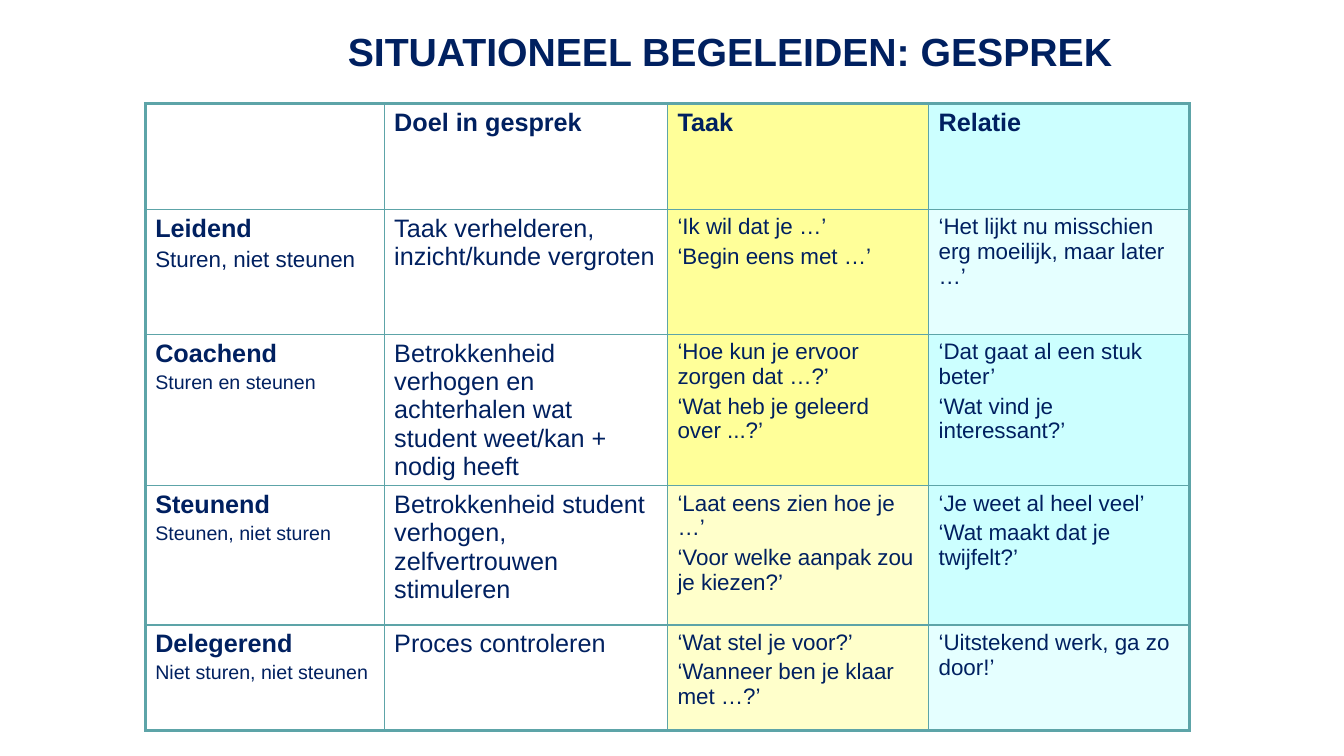
from lxml.etree import SubElement
from pptx import Presentation
from pptx.dml.color import RGBColor
from pptx.enum.text import MSO_ANCHOR, PP_ALIGN
from pptx.oxml.ns import qn
from pptx.util import Inches, Pt

NAVY = RGBColor(0x00, 0x20, 0x60)
TEAL = RGBColor(0x5D, 0xA4, 0xA8)
YELLOW = RGBColor(0xFF, 0xFF, 0x99)
CYAN = RGBColor(0xCC, 0xFF, 0xFF)

COLUMNS = [2.37, 2.81, 2.59, 2.59]
ROWS = [1.05, 1.24, 1.38, 1.38, 1.05]
COLUMN_FILLS = [None, None, YELLOW, CYAN]
PALE_CELLS = {(1, 3), (3, 2), (4, 2), (4, 3)}

# Each cell is a list of paragraphs
CELLS = [
    [[], ["Doel in gesprek"], ["Taak"], ["Relatie"]],
    [["Leidend", "Sturen, niet steunen"],
     ["Taak verhelderen, inzicht/kunde vergroten"],
     ["‘Ik wil dat je …’", "‘Begin eens met …’"],
     ["‘Het lijkt nu misschien erg moeilijk, maar later …’"]],
    [["Coachend", "Sturen en steunen"],
     ["Betrokkenheid verhogen en achterhalen wat student weet/kan + nodig heeft"],
     ["‘Hoe kun je ervoor zorgen dat …?’", "‘Wat heb je geleerd over ...?’"],
     ["‘Dat gaat al een stuk beter’", "‘Wat vind je interessant?’"]],
    [["Steunend", "Steunen, niet sturen"],
     ["Betrokkenheid student verhogen, zelfvertrouwen stimuleren"],
     ["‘Laat eens zien hoe je …’", "‘Voor welke aanpak zou je kiezen?’"],
     ["‘Je weet al heel veel’", "‘Wat maakt dat je twijfelt?’"]],
    [["Delegerend", "Niet sturen, niet steunen"],
     ["Proces controleren"],
     ["‘Wat stel je voor?’", "‘Wanneer ben je klaar met …?’"],
     ["‘Uitstekend werk, ga zo door!’"]],
]


def add_run(p, text, size, bold):
    r = p.add_run()
    r.text = text
    r.font.name = "Arial"
    r.font.size = Pt(size)
    r.font.bold = bold
    r.font.color.rgb = NAVY


def add_border(cell, side, width):
    """Draw one side (L, R, T or B) of a cell; call before filling the cell."""
    ln = SubElement(cell._tc.get_or_add_tcPr(), qn(f"a:ln{side}"), w=str(Pt(width)))
    fill = SubElement(ln, qn("a:solidFill"))
    SubElement(fill, qn("a:srgbClr"), val=str(TEAL))


prs = Presentation()
prs.slide_width, prs.slide_height = Inches(13.33), Inches(7.5)
s = prs.slides.add_slide(prs.slide_layouts[5])

title = s.shapes.title
title.left, title.top = Inches(3.35), Inches(0.27)
title.width, title.height = Inches(8.44), Inches(0.76)
tf = title.text_frame
tf.word_wrap = True
tf.vertical_anchor = MSO_ANCHOR.TOP
p = tf.paragraphs[0]
p.alignment = PP_ALIGN.LEFT
p.line_spacing = 0.9
add_run(p, "SITUATIONEEL BEGELEIDEN: GESPREK", 28, True)

table = s.shapes.add_table(len(ROWS), len(COLUMNS), Inches(1.44), Inches(1.03),
                           Inches(sum(COLUMNS)), Inches(sum(ROWS))).table
table.first_row = False
table.horz_banding = False
for column, width in zip(table.columns, COLUMNS):
    column.width = Inches(width)
for row, height in zip(table.rows, ROWS):
    row.height = Inches(height)

for i, row in enumerate(CELLS):
    for j, texts in enumerate(row):
        cell = table.cell(i, j)
        outer_sides = {"L": j == 0, "R": j == len(COLUMNS) - 1,
                       "T": i == 0, "B": i == len(ROWS) - 1}
        for side, outer in outer_sides.items():
            add_border(cell, side, 2.25 if outer else 1)

        if COLUMN_FILLS[j] is None:
            cell.fill.background()
        else:
            cell.fill.solid()
            cell.fill.fore_color.rgb = COLUMN_FILLS[j]
            if (i, j) in PALE_CELLS:
                color = cell._tc.tcPr.find(qn("a:solidFill")).find(qn("a:srgbClr"))
                SubElement(color, qn("a:alpha"), val="50000")

        tf = cell.text_frame
        for k, text in enumerate(texts):
            if j == 0 and k == 1:
                size = 16 if i == 1 else 14
            else:
                size = 18 if i == 0 or j < 2 else 16
            p = tf.add_paragraph() if k else tf.paragraphs[0]
            if k:
                p.space_before = Pt(0.2 * size)
            add_run(p, text, size, i == 0 or (j == 0 and k == 0))

prs.save("out.pptx")
